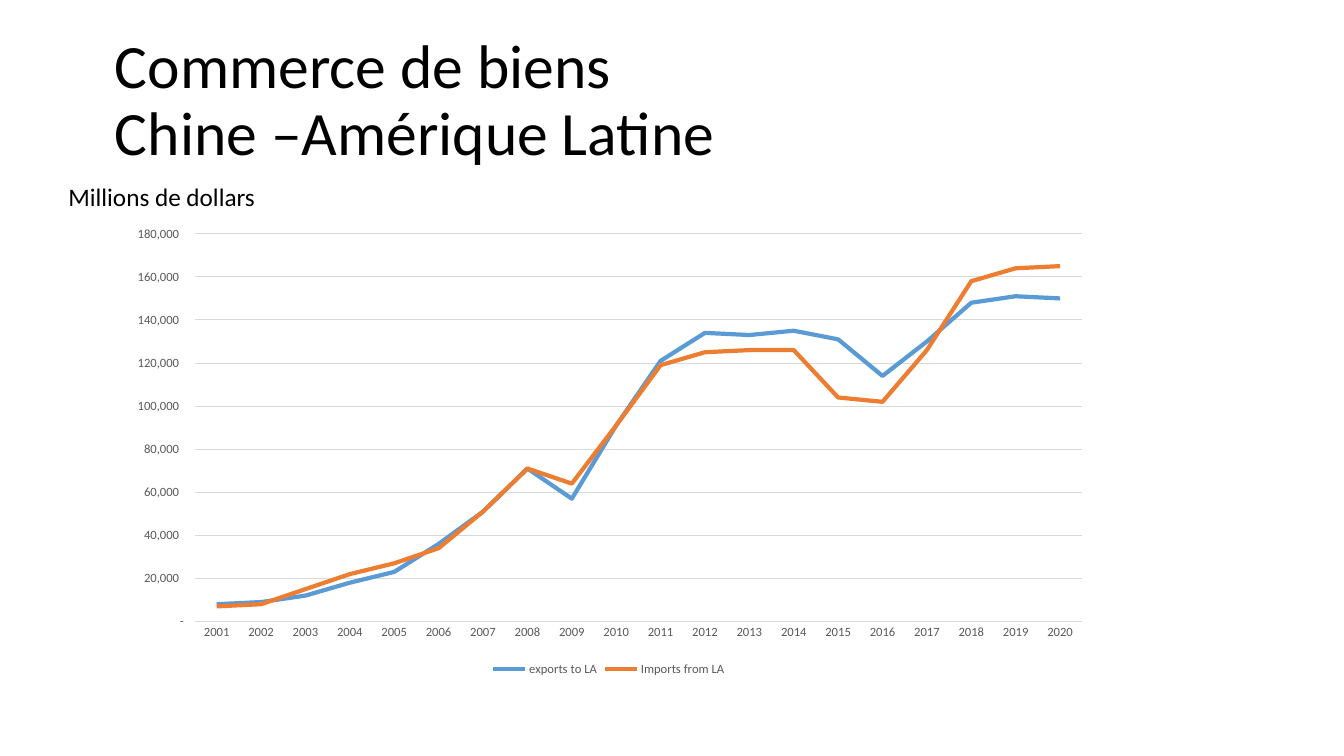
from dataclasses import dataclass

from lxml import etree
from pptx import Presentation, util as u
from pptx.chart import data as cd
from pptx.dml.color import RGBColor
from pptx.enum import chart as ce, text


@dataclass(frozen=True)
class Theme:
    font: str = "Calibri"
    ink: str = "000000"
    label: str = "595959"
    grid: str = "D9D9D9"
    exports: str = "5B9BD5"
    imports: str = "ED7D31"
    title_pt: int = 44
    unit_pt: int = 18
    axis_pt: int = 9


T = Theme()


def style(font, size, color):
    font.name, font.size = T.font, u.Pt(size)
    font.color.rgb = RGBColor.from_string(color)


def stroke(line, color, width):
    line.color.rgb = RGBColor.from_string(color)
    line.width = u.Pt(width)


prs = Presentation()
prs.slide_width, prs.slide_height = u.Inches(13.33), u.Inches(7.5)
W, H = prs.slide_width, prs.slide_height
s = prs.slides.add_slide(prs.slide_layouts[5])

# Title
sp = s.shapes.title
sp.left, sp.top = int(W * 0.078), int(H * 0.033)
sp.width, sp.height = int(W * 0.772), int(H * 0.204)
tf = sp.text_frame
tf.word_wrap = True
tf.auto_size = text.MSO_AUTO_SIZE.NONE
tf.vertical_anchor = text.MSO_ANCHOR.MIDDLE
p = tf.paragraphs[0]
p.alignment, p.line_spacing = text.PP_ALIGN.LEFT, 0.9
for i, words in enumerate(("Commerce de biens", "Chine –Amérique Latine")):
    if i:
        p.add_line_break()
    r = p.add_run()
    r.text = words
    style(r.font, T.title_pt, T.ink)

# Trade chart, in thousands of millions until scaled
trade = (
    ("exports to LA", T.exports,
     (8, 9, 12, 18, 23, 36, 51, 71, 57, 91,
      121, 134, 133, 135, 131, 114, 130, 148, 151, 150)),
    ("Imports from LA", T.imports,
     (7, 8, 15, 22, 27, 34, 51, 71, 64, 91,
      119, 125, 126, 126, 104, 102, 126, 158, 164, 165)),
)
data = cd.CategoryChartData(number_format="#,##0")
data.categories = [str(year) for year in range(2001, 2021)]
for name, _, values in trade:
    data.add_series(name, [v * 1000 for v in values])
ch = s.shapes.add_chart(
    ce.XL_CHART_TYPE.LINE, int(W * 0.086), int(H * 0.288),
    int(W * 0.734), int(H * 0.612), data).chart
ch.has_title = False
style(ch.font, 10, T.ink)
ch.plots[0].vary_by_categories = False
for ser, (_, color, _) in zip(ch.plots[0].series, trade):
    ser.smooth = False
    ser.marker.style = ce.XL_MARKER_STYLE.NONE
    stroke(ser.format.line, color, 3)

# Axes
cat, val = ch.category_axis, ch.value_axis
for axis in (cat, val):
    axis.major_tick_mark = axis.minor_tick_mark = ce.XL_TICK_MARK.NONE
    style(axis.tick_labels.font, T.axis_pt, T.label)
stroke(cat.format.line, T.grid, 0.75)
val.format.line.fill.background()
val.minimum_scale, val.maximum_scale, val.major_unit = 0, 180000, 20000
val.has_major_gridlines = True
stroke(val.major_gridlines.format.line, T.grid, 0.75)
val.tick_labels.number_format = r'_-* #,##0\ _€_-;\-* #,##0\ _€_-;_-* "-"?'
val.tick_labels.number_format_is_linked = False

# Legend
ch.has_legend = True
ch.legend.position = ce.XL_LEGEND_POSITION.BOTTOM
ch.legend.include_in_layout = False
style(ch.legend.font, T.axis_pt, T.label)

# Plot area as shares of the chart frame
C = "{http://schemas.openxmlformats.org/drawingml/2006/chart}"
area = ch.plots[0]._element.getparent()
for old in area.findall(C + "layout"):
    area.remove(old)
layout = etree.Element(C + "layout")
area.insert(0, layout)
manual = etree.SubElement(layout, C + "manualLayout")
for tag, value in (("layoutTarget", "inner"), ("xMode", "edge"), ("yMode", "edge"),
                   ("x", "0.08"), ("y", "0.035"), ("w", "0.9"), ("h", "0.838")):
    etree.SubElement(manual, C + tag).set("val", value)

# Unit label
sp = s.shapes.add_textbox(int(W * 0.0435), int(H * 0.233), int(W * 0.174), int(H * 0.053))
tf = sp.text_frame
tf.word_wrap = False
tf.auto_size = text.MSO_AUTO_SIZE.SHAPE_TO_FIT_TEXT
r = tf.paragraphs[0].add_run()
r.text = "Millions de dollars"
style(r.font, T.unit_pt, T.ink)

prs.save("out.pptx")
